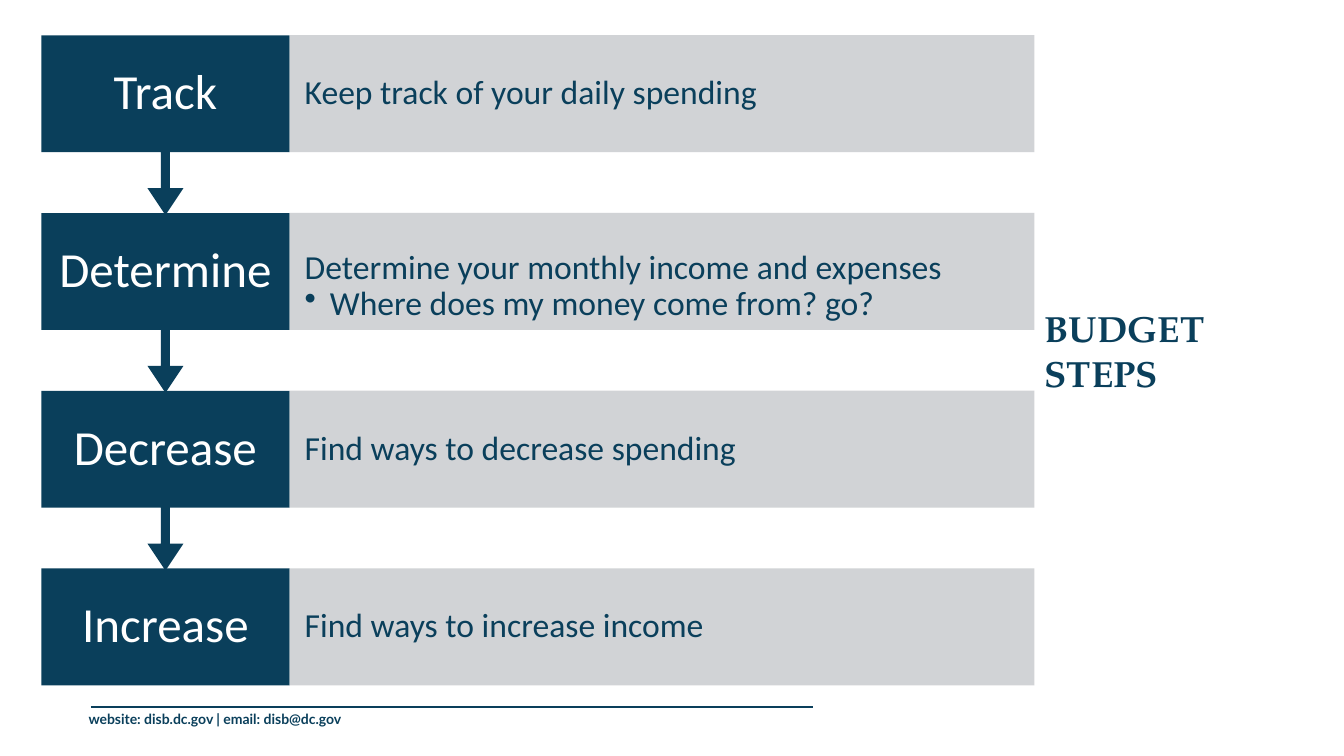
import lxml.etree
import pptx
import pptx.dml.color
import pptx.enum.shapes
import pptx.enum.text
import pptx.oxml.ns
import pptx.util

INCH = pptx.util.Inches
POINT = pptx.util.Pt
KIND = pptx.enum.shapes.MSO_SHAPE
ALIGN = pptx.enum.text.PP_ALIGN
ANCHOR = pptx.enum.text.MSO_ANCHOR
NAVY, GREY, WHITE = "0A3F5B", "CCCFD2", "FFFFFF"


def tint(text):
    return pptx.dml.color.RGBColor.from_string(text)


def assign(thing, form):
    for name, value in form.items():
        setattr(thing, name, value)


def child(node, tag, **attrs):
    return lxml.etree.SubElement(node, pptx.oxml.ns.qn(tag), attrs)


class Board:
    """Current slide, its grid and its text styles."""
    left, top = 0.41, 0.35
    col, row = 2.4625, 5.29 / 3
    fonts = {
        "title": dict(name="TeX Gyre Pagella", size=POINT(26), bold=True),
        "label": dict(name="Calibri", size=POINT(35)),
        "body": dict(name="Calibri", size=POINT(24)),
        "foot": dict(name="Lato", size=POINT(10), bold=True),
    }

    def __init__(self, slide):
        self.slide = slide

    def point(self, col, row):
        return INCH(self.left + col * self.col), INCH(self.top + row * self.row)

    def area(self, col, row, cols, rows):
        return *self.point(col, row), INCH(cols * self.col), INCH(rows * self.row)

    def label(self, shape, lines, style, color, pad=(0.1, 0.05),
              anchor=ANCHOR.MIDDLE, **form):
        side, edge = INCH(pad[0]), INCH(pad[1])
        frame = shape.text_frame
        assign(frame, dict(
            word_wrap=True, auto_size=pptx.enum.text.MSO_AUTO_SIZE.NONE,
            vertical_anchor=anchor, margin_left=side, margin_right=side,
            margin_top=edge, margin_bottom=edge))
        for index, line in enumerate(lines):
            para = frame.add_paragraph() if index else frame.paragraphs[0]
            assign(para, dict(alignment=ALIGN.LEFT) | form)
            if index:
                self.bullet(para)
            run = para.add_run()
            run.text = line
            assign(run.font, self.fonts[style])
            run.font.color.rgb = tint(color)

    def bullet(self, para):
        para.line_spacing = 0.9
        props = para._p.get_or_add_pPr()
        props.set("marL", str(INCH(0.25)))
        props.set("indent", str(INCH(-0.25)))
        child(props, "a:buChar", char="•")

    def block(self, kind, area, color, alpha=None):
        shape = self.slide.shapes.add_shape(kind, *self.area(*area))
        shape.shadow.inherit = False
        shape.fill.solid()
        shape.fill.fore_color.rgb = tint(color)
        shape.line.fill.background()
        if alpha:
            fill = next(shape.element.spPr.iter(pptx.oxml.ns.qn("a:srgbClr")))
            child(fill, "a:alpha", val=str(alpha * 1000))
        return shape

    def title(self, text, area):
        shape = self.slide.shapes.title
        assign(shape, dict(zip(("left", "top", "width", "height"), self.area(*area))))
        self.label(shape, [text], "title", NAVY, line_spacing=POINT(32))

    def note(self, text, area):
        shape = self.slide.shapes.add_textbox(*self.area(*area))
        self.label(shape, [text], "foot", NAVY, anchor=ANCHOR.TOP)

    def rule(self, start, end):
        line = self.slide.shapes.add_connector(
            pptx.enum.shapes.MSO_CONNECTOR.STRAIGHT,
            *self.point(*start), *self.point(*end))
        line.line.width = POINT(1)
        line.line.color.rgb = tint(NAVY)
        child(line._element.spPr, "a:effectLst")

    def step(self, row, name, lines, last):
        tall = 1.16 / self.row
        # Label, with an arrow to the next step
        if last:
            head = self.block(KIND.RECTANGLE, (0, row, 1, tall), NAVY)
        else:
            head = self.block(KIND.DOWN_ARROW_CALLOUT,
                              (0, row, 1, tall / 0.65), NAVY)
            for index, value in enumerate((0.05, 0.1, 0.15, 0.65)):
                head.adjustments[index] = value
        self.label(head, [name], "label", WHITE,
                   alignment=ALIGN.CENTER, line_spacing=0.9)
        # Description
        body = self.block(KIND.RECTANGLE, (1, row, 3, tall), GREY, 90)
        many = len(lines) > 1
        self.label(body, lines, "body", NAVY, (0.15, 0.33),
                   ANCHOR.TOP if many else ANCHOR.MIDDLE,
                   line_spacing=1.0 if many else 0.9)


STEPS = [
    ("Track", ["Keep track of your daily spending"]),
    ("Determine", ["Determine your monthly income and expenses",
                   "Where does my money come from? go?"]),
    ("Decrease", ["Find ways to decrease spending"]),
    ("Increase", ["Find ways to increase income"]),
]


def main():
    deck = pptx.Presentation()
    assign(deck, dict(slide_width=INCH(13.33), slide_height=INCH(7.5)))
    board = Board(deck.slides.add_slide(deck.slide_layouts[5]))

    # Footer
    board.note("website: disb.dc.gov | email: disb@dc.gov", (0.15, 3.77, 1.51, 0.15))
    board.rule((0.2, 3.78), (3.11, 3.78))

    # Title
    board.title("BUDGET STEPS", (4, 0.2, 1.14, 3.14))

    # Steps
    for row, (name, lines) in enumerate(STEPS):
        board.step(row, name, lines, row == len(STEPS) - 1)

    deck.save("out.pptx")


if __name__ == "__main__":
    main()
